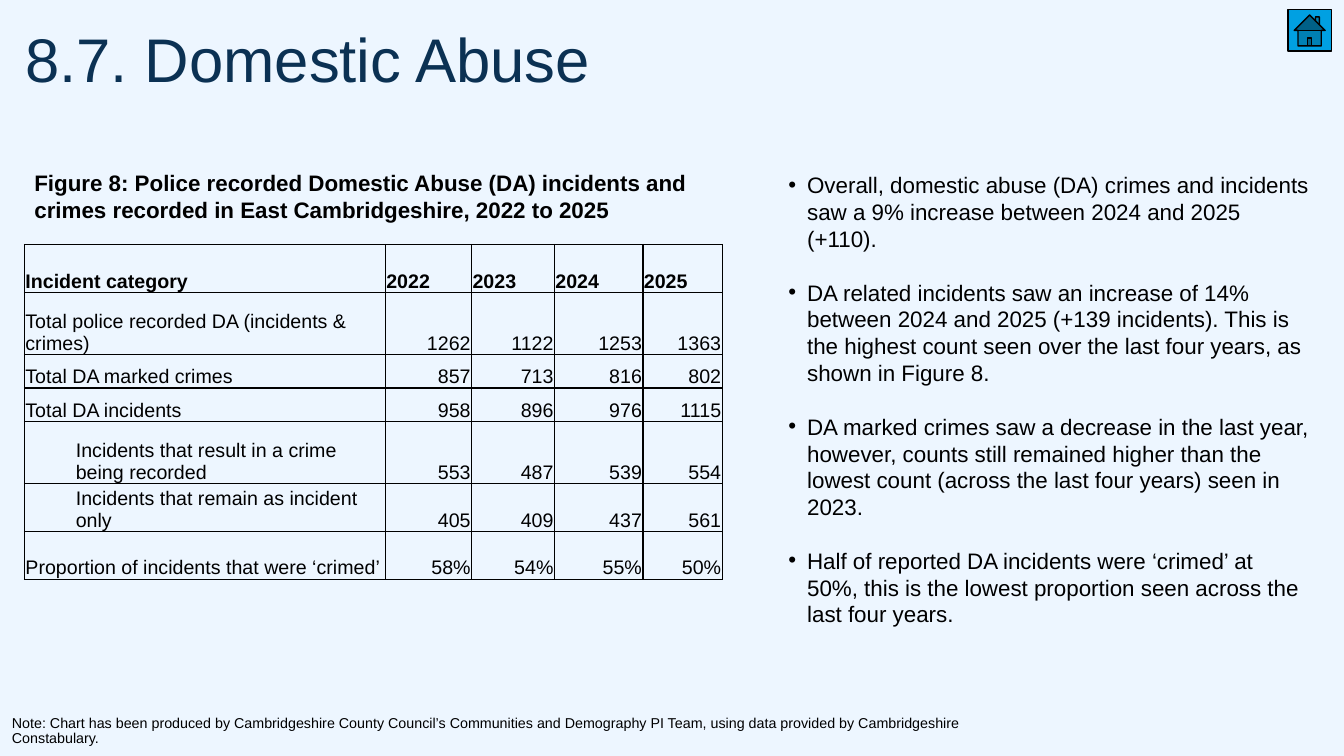
from lxml.etree import SubElement
from pptx import Presentation
from pptx.dml.color import RGBColor
from pptx.enum.shapes import MSO_SHAPE
from pptx.enum.text import MSO_ANCHOR, MSO_AUTO_SIZE, PP_ALIGN
from pptx.oxml import parse_xml
from pptx.oxml.ns import nsdecls, qn
from pptx.util import Pt

BLACK = "000000"
COLS = [257.8, 61.6, 59.2, 63.2, 56.6]
ROWS = [34.1, 44.4, 24, 24, 44.4, 34.1, 34.1]
DATA = [
    ["Incident category", "2022", "2023", "2024", "2025"],
    ["Total police recorded DA (incidents & crimes)", "1262", "1122", "1253", "1363"],
    ["Total DA marked crimes", "857", "713", "816", "802"],
    ["Total DA incidents", "958", "896", "976", "1115"],
    ["Incidents that result in a crime being recorded", "553", "487", "539", "554"],
    ["Incidents that remain as incident only", "405", "409", "437", "561"],
    ["Proportion of incidents that were ‘crimed’", "58%", "54%", "55%", "50%"],
]
NESTED = (4, 5)
POINTS = [
    "Overall, domestic abuse (DA) crimes and incidents saw a 9% increase between "
    "2024 and 2025 (+110).",
    "DA related incidents saw an increase of 14% between 2024 and 2025 (+139 incidents). "
    "This is the highest count seen over the last four years, as shown in Figure 8.",
    "DA marked crimes saw a decrease in the last year, however, counts still remained "
    "higher than the lowest count (across the last four years) seen in 2023.",
    "Half of reported DA incidents were ‘crimed’ at 50%, this is the lowest proportion "
    "seen across the last four years.",
]
FIGURE = ("Figure 8: Police recorded Domestic Abuse (DA) incidents and crimes recorded "
          "in East Cambridgeshire, 2022 to 2025")
NOTE = ("Note: Chart has been produced by Cambridgeshire County Council’s Communities and "
        "Demography PI Team, using data provided by Cambridgeshire Constabulary.")


def paint(code):
    """Turn a hex string into a colour."""
    return RGBColor.from_string(code)


def write(para, text, size=16, color=BLACK, bold=False, align=PP_ALIGN.LEFT,
          line=None, before=None, left=0, bullet=None):
    """Put formatted text into a paragraph."""
    props = para._p.get_or_add_pPr()
    if left:
        props.set("marL", str(Pt(left)))
        props.set("indent", str(-Pt(left) if bullet else 0))
    if bullet:
        SubElement(props, qn("a:buFont")).set("typeface", "Arial")
        SubElement(props, qn("a:buChar")).set("char", bullet)
    para.alignment = align
    if line:
        para.line_spacing = line
    if before:
        para.space_before = Pt(before)
    run = para.add_run()
    run.text = text
    font = run.font
    font.name, font.size, font.bold = "Arial", Pt(size), bold
    font.color.rgb = paint(color)


def set_frame(frame, anchor=MSO_ANCHOR.TOP, flush=False):
    """Wrap a text frame, anchor it and drop its insets if flush."""
    frame.word_wrap = True
    frame.auto_size = MSO_AUTO_SIZE.NONE
    frame.vertical_anchor = anchor
    if flush:
        frame.margin_left = frame.margin_right = 0
        frame.margin_top = frame.margin_bottom = 0
    return frame


def add_box(slide, box, **style):
    """Add a text box and return its frame."""
    return set_frame(slide.shapes.add_textbox(*map(Pt, box)).text_frame, **style)


def add_title(slide, box, text):
    """Move and fill the title placeholder."""
    title = slide.shapes.title
    title.left, title.top, title.width, title.height = map(Pt, box)
    frame = set_frame(title.text_frame, flush=True)
    write(frame.paragraphs[0], text, size=44, color="0B3153", line=0.9)


def add_points(slide, box):
    """List the findings as spaced bullets."""
    frame = add_box(slide, box)
    for i, text in enumerate(POINTS):
        para = frame.add_paragraph() if i else frame.paragraphs[0]
        write(para, text, left=13.5, bullet="•", before=19 if i else None)


def style_cell(cell):
    """Clear a cell's fill, tighten it and rule all four sides."""
    cell.fill.background()
    cell.vertical_anchor = MSO_ANCHOR.BOTTOM
    cell.margin_left = cell.margin_right = cell.margin_top = Pt(0.7)
    cell.margin_bottom = 0
    props = cell._tc.get_or_add_tcPr()
    for i, side in enumerate("LRTB"):
        props.insert(i, parse_xml(
            f'<a:ln{side} {nsdecls("a")} w="{Pt(1)}"><a:solidFill>'
            f'<a:srgbClr val="{BLACK}"/></a:solidFill></a:ln{side}>'))


def add_grid(slide, left, top):
    """Draw the table of incidents by year."""
    shape = slide.shapes.add_table(len(ROWS), len(COLS), Pt(left), Pt(top),
                                   Pt(sum(COLS)), Pt(sum(ROWS)))
    table = shape.table
    table.first_row = table.horz_banding = False
    for col, width in zip(table.columns, COLS):
        col.width = Pt(width)
    for r, (row, height) in enumerate(zip(table.rows, ROWS)):
        row.height = Pt(height)
        for c, cell in enumerate(row.cells):
            style_cell(cell)
            write(cell.text_frame.paragraphs[0], DATA[r][c], size=14, bold=r == 0,
                  align=PP_ALIGN.RIGHT if r and c else PP_ALIGN.LEFT,
                  left=36 if r in NESTED and c == 0 else 0)


def add_figure(slide, box):
    """Place the figure heading with its table below."""
    left, top, width, height = box
    write(add_box(slide, (left, top, width, 46)).paragraphs[0], FIGURE, bold=True)
    add_grid(slide, left, top + height - sum(ROWS))


def add_home(slide, box):
    """Draw the home button."""
    home = slide.shapes.add_shape(MSO_SHAPE.ACTION_BUTTON_HOME, *map(Pt, box))
    home.shadow.inherit = False
    home.fill.solid()
    home.fill.fore_color.rgb = paint("00A0E2")
    home.line.color.rgb = paint(BLACK)
    home.line.width = Pt(1)


def add_note(slide, box):
    """Write the source note at the foot."""
    frame = add_box(slide, box, anchor=MSO_ANCHOR.BOTTOM, flush=True)
    write(frame.paragraphs[0], NOTE, size=10.2, line=0.9)


def main():
    """Build and save the slide."""
    deck = Presentation()
    deck.slide_width, deck.slide_height = Pt(960), Pt(540)
    slide = deck.slides.add_slide(deck.slide_layouts[5])
    slide.background.fill.solid()
    slide.background.fill.fore_color.rgb = paint("EDF6FF")
    add_title(slide, (18, 21, 828, 96), "8.7. Domestic Abuse")
    add_figure(slide, (17.5, 117, 498, 296.8))
    add_points(slide, (556, 119, 386.6, 353.5))
    add_note(slide, (8.5, 516, 741, 17.5))
    add_home(slide, (920, 7, 31, 29.5))
    deck.save("out.pptx")


if __name__ == "__main__":
    main()
